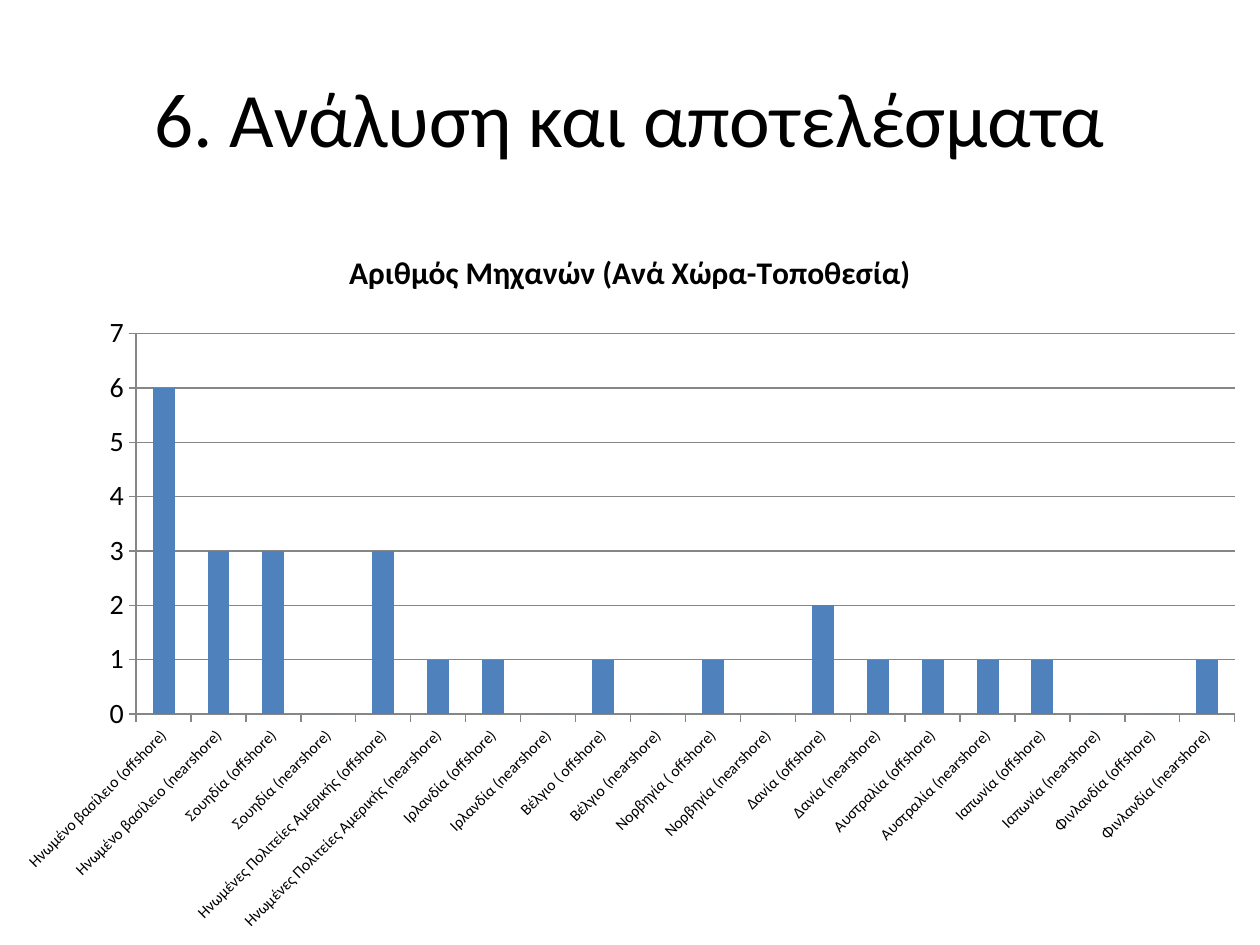
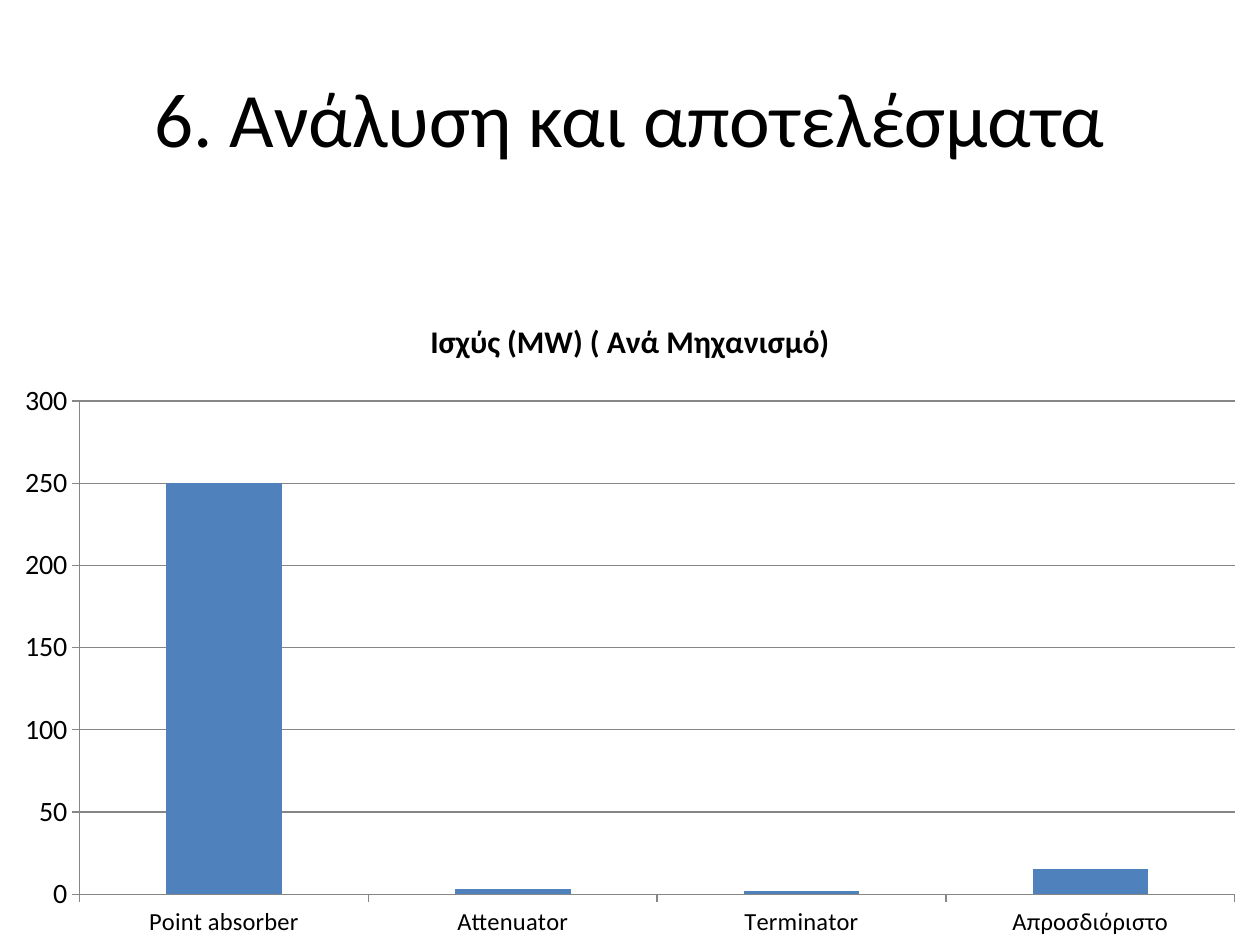
"""Build two slides of column charts on wave energy machines."""
from itertools import product

from pptx import Presentation
from pptx import util as u
from pptx.chart import data as chart_data
from pptx.dml import color
from pptx.enum import chart as charts, text

COLORS = {"ink": "000000", "bar": "4F81BD", "line": "868686"}
FONT = "Calibri"
TITLE = "6. Ανάλυση και αποτελέσματα"


def px(length):
    return u.Emu(round(length * 914400 / 126))


def write(frame, words, size, bold=False, align=text.PP_ALIGN.CENTER):
    para = frame.paragraphs[0]
    para.alignment = align
    span = para.add_run()
    span.text = words
    span.font.name = FONT
    span.font.size = u.Pt(size)
    span.font.bold = bold
    span.font.color.rgb = color.RGBColor.from_string(COLORS["ink"])


countries = [
    "Ηνωμένο βασίλειο", "Σουηδία", "Ηνωμένες Πολιτείες Αμερικής", "Ιρλανδία", "Βέλγιο",
    "Νορβηγία", "Δανία", "Αυστραλία", "Ιαπωνία", "Φινλανδία",
]
spaced = [("Βέλγιο", "offshore"), ("Νορβηγία", "offshore")]
locations = [
    f"{country} ({' ' if (country, site) in spaced else ''}{site})"
    for country, site in product(countries, ["offshore", "nearshore"])
]

slides = [
    {
        "heading": "Αριθμός Μηχανών (Ανά Χώρα-Τοποθεσία)",
        "top": 224, "height": 721, "label_size": 9, "rotation": -45,
        "maximum": 7, "step": 1,
        "categories": locations,
        "values": [6, 3, 3, 0, 3, 1, 1, 0, 1, 0, 1, 0, 2, 1, 1, 1, 1, 0, 0, 1],
    },
    {
        "heading": "Ισχύς (MW) ( Ανά Μηχανισμό)",
        "top": 294, "height": 656, "label_size": 14, "rotation": 0,
        "maximum": 300, "step": 50,
        "categories": ["Point absorber", "Attenuator", "Terminator", "Απροσδιόριστο"],
        "values": [250, 3, 2, 15],
    },
]

deck = Presentation()
deck.slide_width, deck.slide_height = px(1260), px(945)
line_color = color.RGBColor.from_string(COLORS["line"])

for content in slides:
    page = deck.slides.add_slide(deck.slide_layouts[6])
    box = page.shapes.add_textbox(px(63), px(38), px(1134), px(158))
    box.text_frame.word_wrap = True
    box.text_frame.vertical_anchor = text.MSO_ANCHOR.MIDDLE
    write(box.text_frame, TITLE, size=44)

    numbers = chart_data.CategoryChartData()
    numbers.categories = content["categories"]
    numbers.add_series("Series 1", content["values"])
    chart = page.shapes.add_chart(
        charts.XL_CHART_TYPE.COLUMN_CLUSTERED,
        px(0), px(content["top"]), px(1260), px(content["height"]), numbers,
    ).chart
    chart.font.name = FONT
    chart.font.size = u.Pt(10)
    chart.font.color.rgb = color.RGBColor.from_string(COLORS["ink"])
    chart.has_legend = False
    chart.has_title = True
    chart.chart_title.include_in_layout = False
    write(chart.chart_title.text_frame, content["heading"], size=18, bold=True)

    plot = chart.plots[0]
    plot.gap_width = 150
    plot.vary_by_categories = False
    fill = plot.series[0].format.fill
    fill.solid()
    fill.fore_color.rgb = color.RGBColor.from_string(COLORS["bar"])

    names, scale = chart.category_axis, chart.value_axis
    for axis, size in [(names, content["label_size"]), (scale, 16)]:
        axis.major_tick_mark = charts.XL_TICK_MARK.OUTSIDE
        axis.tick_labels.font.size = u.Pt(size)
        axis.format.line.color.rgb = line_color
        axis.format.line.width = u.Pt(0.75)
    if content["rotation"]:
        body = names.tick_labels.font._element.getparent().getparent().getparent().bodyPr
        body.set("rot", str(content["rotation"] * 60000))
    scale.minimum_scale = 0
    scale.maximum_scale = content["maximum"]
    scale.major_unit = content["step"]
    scale.has_major_gridlines = True
    scale.major_gridlines.format.line.color.rgb = line_color
    scale.major_gridlines.format.line.width = u.Pt(0.75)

deck.save("out.pptx")
